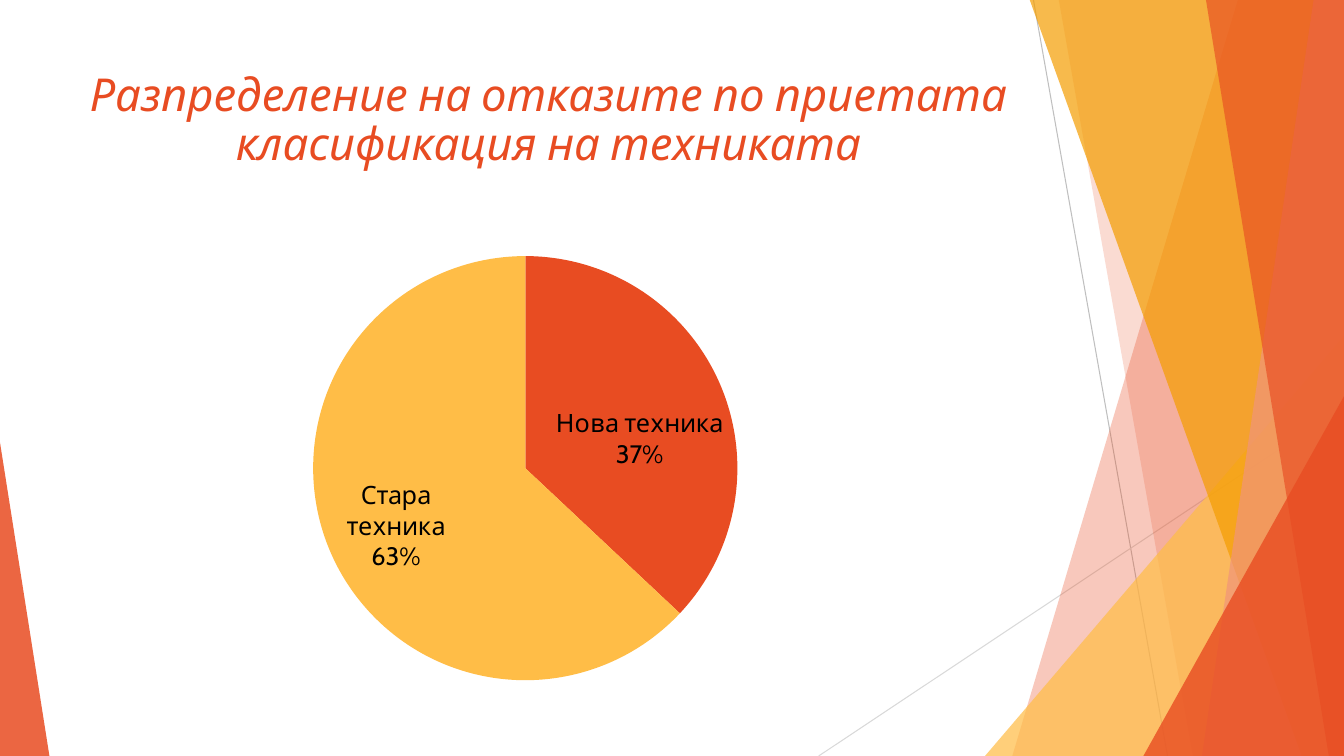
from lxml.etree import SubElement
from pptx import Presentation
from pptx.chart.data import CategoryChartData
from pptx.dml.color import RGBColor
from pptx.enum.chart import XL_CHART_TYPE, XL_LABEL_POSITION
from pptx.enum.shapes import MSO_CONNECTOR, MSO_SHAPE
from pptx.enum.text import MSO_ANCHOR, PP_ALIGN
from pptx.oxml import parse_xml
from pptx.oxml.ns import nsdecls, qn
from pptx.util import Pt

PX = 9144
WIDTH, HEIGHT = 1333, 750
FONT = "Cabin"
BLACK = RGBColor(0x00, 0x00, 0x00)
ORANGE = RGBColor(0xE8, 0x4C, 0x22)
YELLOW = RGBColor(0xFF, 0xBD, 0x47)
AMBER = RGBColor(0xF4, 0x9D, 0x00)
SALMON = RGBColor(0xF1, 0x94, 0x7A)
GREY = RGBColor(0xBF, 0xBF, 0xBF)
LIGHT_GREY = RGBColor(0xD9, 0xD9, 0xD9)

LINES = [((1025, 0), (1158, HEIGHT), GREY), ((WIDTH, 403), (812, HEIGHT), LIGHT_GREY)]
RIGHT_FACETS = [
    ("band", 1228, 1004, ORANGE, 30),
    ("band", 1050, 1183, ORANGE, 20),
    ("triangle", 977, 333, YELLOW, 72),
    ("band", 1021, 1291, AMBER, 70),
    ("band", 1303, 1192, SALMON, 70),
    ("band", 1196, 1318, ORANGE, 65),
    ("triangle", 1134, 393, ORANGE, 80),
]
SLICES = [("Нова техника", 37, ORANGE), ("Стара техника", 63, YELLOW)]


def emu(box):
    """Turn px lengths into EMU."""
    return [length * PX for length in box]


def set_format(target, values):
    """Set each attribute of the target from a dict."""
    for name, value in values.items():
        setattr(target, name, value)


def paint(shape, color, opacity):
    """Give a shape a translucent fill with no line or shadow."""
    shape.shadow.inherit = False
    shape.line.fill.background()
    shape.fill.solid()
    shape.fill.fore_color.rgb = color
    color_node = shape.fill._xPr.find(qn("a:solidFill"))[0]
    SubElement(color_node, qn("a:alpha")).set("val", str(opacity * 1000))


def add_line(page, start, end, color):
    """Draw a thin line without shadow."""
    line = page.shapes.add_connector(MSO_CONNECTOR.STRAIGHT, *emu(start + end))
    line.line.color.rgb = color
    line.line.width = Pt(0.75)
    SubElement(line._element.spPr, qn("a:effectLst"))


def add_band(page, top_left, bottom_left, color, opacity):
    """Draw a full-height band from a slanted edge to the right side."""
    builder = page.shapes.build_freeform(top_left, -1, scale=PX)
    builder.add_line_segments([(WIDTH, -1), (WIDTH, HEIGHT), (bottom_left, HEIGHT)])
    paint(builder.convert_to_shape(), color, opacity)


def add_triangle(page, box, apex, color, opacity):
    """Draw a right triangle with its apex at the given share of the width."""
    triangle = page.shapes.add_shape(MSO_SHAPE.ISOSCELES_TRIANGLE, *emu(box))
    triangle.adjustments[0] = apex
    paint(triangle, color, opacity)


def add_facets(page):
    """Draw the lines and translucent facets along both sides."""
    for start, end, color in LINES:
        add_line(page, start, end, color)
    for kind, first, second, color, opacity in RIGHT_FACETS:
        if kind == "band":
            add_band(page, first, second, color, opacity)
        else:
            box = (first, second, WIDTH - first, HEIGHT - second)
            add_triangle(page, box, 1, color, opacity)
    add_triangle(page, (0, 439, 49, HEIGHT - 439), 0, ORANGE, 85)


def add_title(page, box, text):
    """Write the centred italic title."""
    frame = page.shapes.add_textbox(*emu(box)).text_frame
    set_format(frame, {"word_wrap": True, "vertical_anchor": MSO_ANCHOR.TOP})
    para = frame.paragraphs[0]
    set_format(para, {"alignment": PP_ALIGN.CENTER, "line_spacing": 0.9})
    span = para.add_run()
    span.text = text
    set_format(span.font, {"name": FONT, "size": Pt(32.4), "italic": True})
    span.font.color.rgb = ORANGE


def add_pie(page, box, diameter):
    """Draw the pie centred in its box, with names and shares as labels."""
    names, shares, colors = zip(*SLICES)
    chart_data = CategoryChartData()
    chart_data.categories = names
    chart_data.add_series("Series 1", shares)
    chart = page.shapes.add_chart(XL_CHART_TYPE.PIE, *emu(box), chart_data).chart
    set_format(chart, {"has_legend": False, "has_title": False})
    set_format(chart.font, {"name": FONT, "size": Pt(18)})
    chart.font.color.rgb = BLACK

    plot = chart.plots[0]
    set_format(plot, {"vary_by_categories": True, "has_data_labels": True})
    set_format(plot.data_labels, {
        "show_category_name": True, "show_percentage": True, "show_value": False,
        "number_format": "0%", "number_format_is_linked": False,
        "position": XL_LABEL_POSITION.BEST_FIT,
    })
    separator = parse_xml(f"<c:separator {nsdecls('c')}>\n</c:separator>")
    plot.data_labels._element.find(qn("c:showBubbleSize")).addnext(separator)
    for index, color in enumerate(colors):
        point = plot.series[0].points[index].format
        point.fill.solid()
        point.fill.fore_color.rgb = color
        point.line.fill.background()

    width, height = (round(diameter / side, 2) for side in box[2:])
    layout = parse_xml(
        f'<c:layout {nsdecls("c")}><c:manualLayout><c:layoutTarget val="inner"/>'
        '<c:xMode val="edge"/><c:yMode val="edge"/>'
        f'<c:x val="{(1 - width) / 2:.3f}"/><c:y val="{(1 - height) / 2:.3f}"/>'
        f'<c:w val="{width}"/><c:h val="{height}"/></c:manualLayout></c:layout>')
    plot_area = plot._element.getparent()
    for old_layout in plot_area.findall(qn("c:layout")):
        plot_area.remove(old_layout)
    plot_area.insert(0, layout)


def main():
    """Build the slide and save the deck."""
    deck = Presentation()
    set_format(deck, {"slide_width": WIDTH * PX, "slide_height": HEIGHT * PX})
    page = deck.slides.add_slide(deck.slide_layouts[6])
    add_facets(page)
    add_title(page, (74, 67, 940, 144),
              "Разпределение на отказите по приетата класификация на техниката")
    add_pie(page, (124, 211, 794, 507), 422)
    deck.save("out.pptx")


if __name__ == "__main__":
    main()
